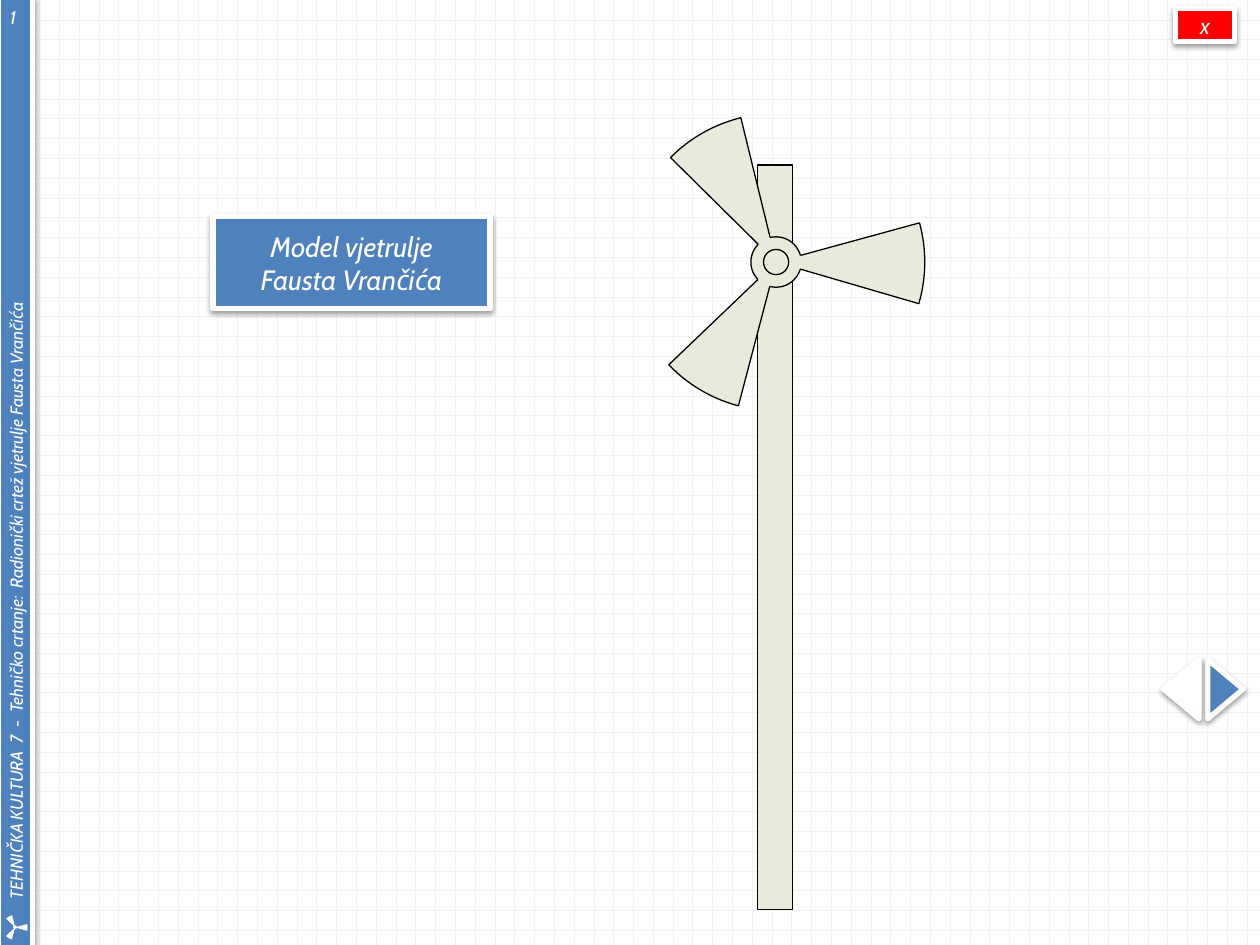
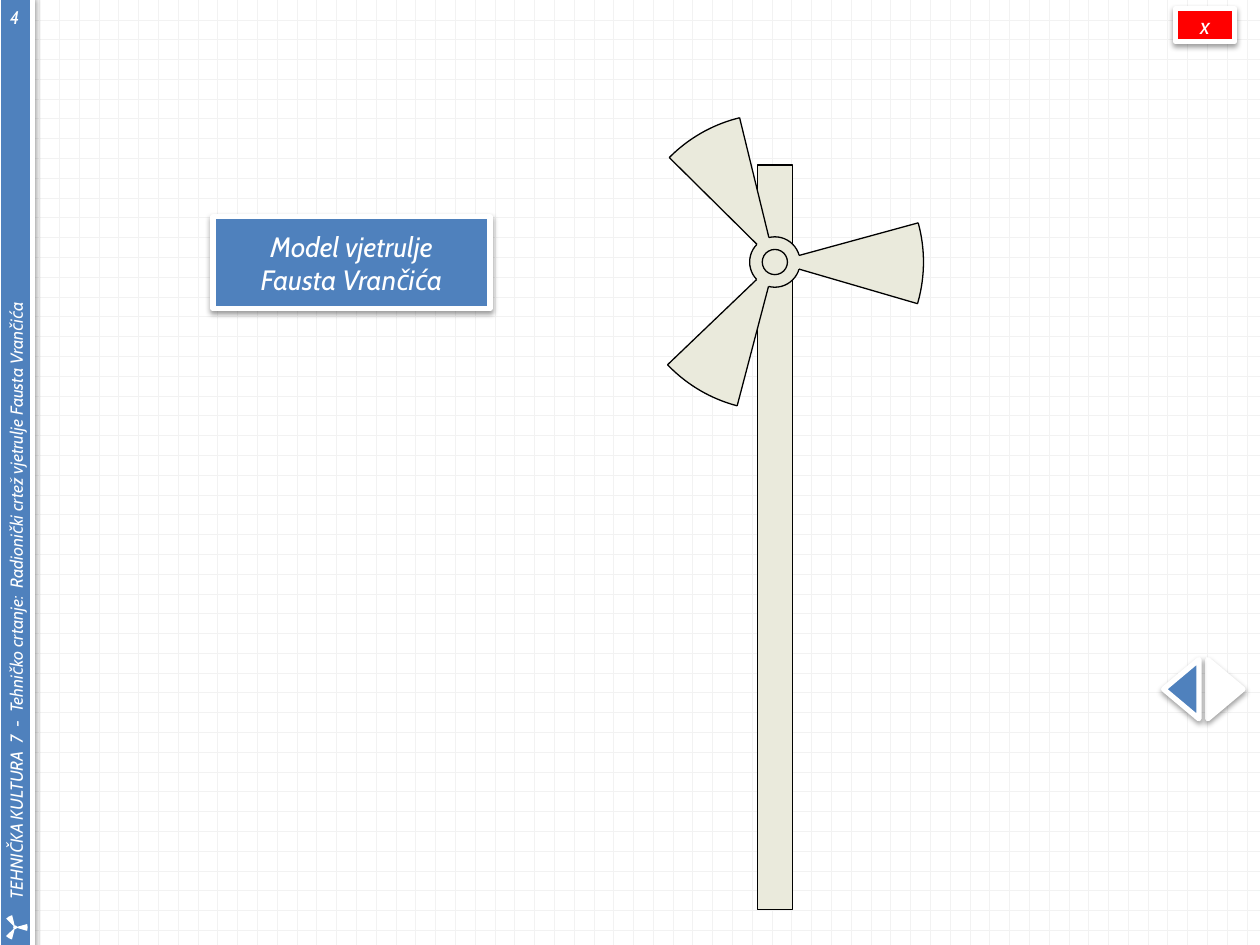
from math import cos, radians, sin

from lxml import etree
from pptx import Presentation
from pptx.dml.color import RGBColor
from pptx.enum.dml import MSO_PATTERN
from pptx.enum.shapes import MSO_CONNECTOR, MSO_SHAPE
from pptx.enum.text import MSO_ANCHOR, PP_ALIGN
from pptx.oxml import parse_xml
from pptx.oxml.ns import qn
from pptx.util import Inches, Pt

BLUE, WHITE, RED, BLACK = "4F81BD", "FFFFFF", "FF0000", "000000"
WOOD, GRID = "EAEADC", "F2F2F2"
FONT = "Cabin"

BAND_TEXT = ("TEHNIČKA KULTURA  7  -  Tehničko crtanje:  "
             "Radionički crtež vjetrulje Fausta Vrančića")
TITLE = "Model vjetrulje\nFausta Vrančića"
SLIDES = [
    {"number": "1", "rotor_x": 6.16, "back": WHITE, "forward": BLUE},
    {"number": "4", "rotor_x": 6.15, "back": BLUE, "forward": WHITE},
]

BLADE_TURNS = (345, 105, 225)
BLADE_START, BLADE_END = -0.3, 31.26  # degrees before the turn is added
ARC_ADJUSTMENTS = (215.822, 18.755)   # the same two angles in preset units

SHADOW = (
    '<a:outerShdw xmlns:a="http://schemas.openxmlformats.org/drawingml/2006/main" '
    'blurRad="40000" dist="20000" dir="5400000" rotWithShape="0">'
    '<a:srgbClr val="000000"><a:alpha val="38000"/></a:srgbClr></a:outerShdw>'
)


def rgb(color):
    return RGBColor.from_string(color)


def place(shape, left, top, width, height):
    shape.left, shape.top = Inches(left), Inches(top)
    shape.width, shape.height = Inches(width), Inches(height)


def paint(shape, fill, line=None, line_width=0.75):
    shape.shadow.inherit = False
    shape.fill.solid()
    shape.fill.fore_color.rgb = rgb(fill)
    if line:
        shape.line.color.rgb = rgb(line)
        shape.line.width = Pt(line_width)
    else:
        shape.line.fill.background()


def paint_raised(shape, fill):
    """Give the thick white frame and soft shadow of bands and buttons."""
    paint(shape, fill, WHITE, 3)
    shape.element.spPr.find(qn("a:effectLst")).append(parse_xml(SHADOW))


def write(shape, text, size, align=PP_ALIGN.CENTER, insets=(0, 0, 0, 0),
          anchor=MSO_ANCHOR.MIDDLE):
    frame = shape.text_frame
    frame.text = text
    frame.word_wrap = True
    frame.vertical_anchor = anchor
    (frame.margin_left, frame.margin_top,
     frame.margin_right, frame.margin_bottom) = map(Inches, insets)
    for paragraph in frame.paragraphs:
        paragraph.alignment = align
        for run in paragraph.runs:
            run.font.name, run.font.size = FONT, Pt(size)
            run.font.italic, run.font.bold = True, False
            run.font.color.rgb = rgb(WHITE)


def add_preset(shapes, preset, box, turn=0):
    shape = shapes.add_shape(preset, *map(Inches, box))
    shape.rotation = turn
    return shape


def add_disc(shapes, preset, center, radius, fill, line, turn=0):
    x, y = center
    disc = add_preset(shapes, preset,
                      (x - radius, y - radius, 2 * radius, 2 * radius), turn)
    paint(disc, fill, line)
    return disc


def add_blade_edge(shapes, center, angle, inner, outer):
    x, y = center
    dx, dy = cos(radians(angle)), sin(radians(angle))
    edge = shapes.add_connector(
        MSO_CONNECTOR.STRAIGHT,
        Inches(x + inner * dx), Inches(y + inner * dy),
        Inches(x + outer * dx), Inches(y + outer * dy))
    edge.line.color.rgb = rgb(BLACK)
    edge.line.width = Pt(0.75)
    etree.SubElement(edge.element.spPr, qn("a:effectLst"))


def add_rotor(slide, center, radius, hub, axle, fill, line=None):
    """Draw hub, three blades and axle as one group."""
    rotor = slide.shapes.add_group_shape()
    parts = rotor.shapes
    add_disc(parts, MSO_SHAPE.OVAL, center, hub, fill, line)
    for turn in BLADE_TURNS:
        blade = add_disc(parts, MSO_SHAPE.ARC, center, radius, fill, line, turn)
        blade.adjustments[0], blade.adjustments[1] = ARC_ADJUSTMENTS
        if line:
            for angle in (BLADE_START, BLADE_END):
                add_blade_edge(parts, center, turn + angle, hub, radius)
    add_disc(parts, MSO_SHAPE.OVAL, center, axle, fill, line)
    return rotor


def move_band_to_layout(slide, layout):
    """Build the side band on a slide, then hand it to the shared layout."""
    band = add_preset(slide.shapes, MSO_SHAPE.RECTANGLE,
                      (-3.65, 3.62, 7.55, 0.27), 270)
    paint_raised(band, BLUE)
    write(band, BAND_TEXT, 10, PP_ALIGN.LEFT, (0.39, 0.05, 0.1, 0.05))
    emblem = add_rotor(slide, (0.12, 7.36), 0.1, 0.015, 0.01, WHITE)
    for part in (band, emblem):
        layout.shapes.element.append(part.element)


def prepare_layout(layout):
    for placeholder in list(layout.placeholders)[1:]:
        placeholder.element.getparent().remove(placeholder.element)
    background = layout.background.fill
    background.patterned()
    background.pattern = MSO_PATTERN.DOTTED_GRID
    background.fore_color.rgb = rgb(GRID)
    background.back_color.rgb = rgb(WHITE)


def fill_slide(slide, content):
    title = slide.shapes.title
    place(title, 1.69, 1.72, 2.2, 0.73)
    paint_raised(title, BLUE)
    write(title, TITLE, 16)

    number = slide.shapes.add_textbox(*map(Inches, (-0.02, 0, 0.29, 0.4)))
    write(number, content["number"], 10.5, PP_ALIGN.LEFT,
          (0.1, 0.05, 0.1, 0.05), MSO_ANCHOR.TOP)

    close = add_preset(slide.shapes, MSO_SHAPE.ROUNDED_RECTANGLE,
                       (9.33, 0.07, 0.47, 0.26))
    close.adjustments[0] = 0
    paint_raised(close, RED)
    write(close, "x", 13)

    for preset, left, key in ((MSO_SHAPE.FLOWCHART_EXTRACT, 9.49, "forward"),
                              (MSO_SHAPE.FLOWCHART_MERGE, 9.14, "back")):
        arrow = add_preset(slide.shapes, preset, (left, 5.33, 0.47, 0.28), 90)
        paint_raised(arrow, content[key])

    mast = add_preset(slide.shapes, MSO_SHAPE.RECTANGLE,
                      (6.01, 1.31, 0.28, 5.91))
    paint(mast, WOOD, BLACK)
    add_rotor(slide, (content["rotor_x"], 2.08), 1.18, 0.2, 0.1, WOOD, BLACK)


def main():
    prs = Presentation()
    prs.slide_width, prs.slide_height = Inches(10), Inches(7.5)
    layout = prs.slide_layouts[5]
    prepare_layout(layout)
    slides = [prs.slides.add_slide(layout) for _ in SLIDES]
    move_band_to_layout(slides[0], layout)
    for slide, content in zip(slides, SLIDES):
        fill_slide(slide, content)
    prs.save("out.pptx")


if __name__ == "__main__":
    main()
